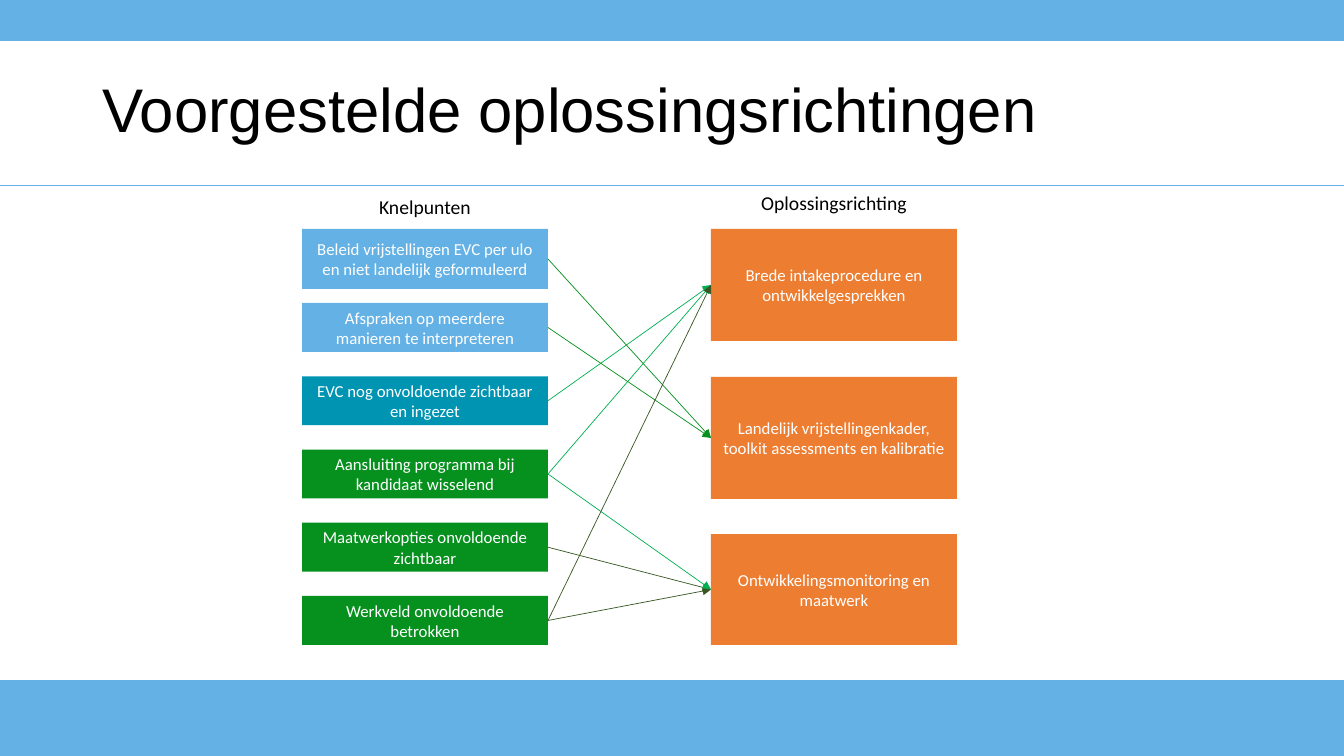
from dataclasses import dataclass

from lxml.etree import SubElement
from pptx import Presentation
from pptx.dml.color import RGBColor
from pptx.enum.shapes import MSO_CONNECTOR, MSO_SHAPE
from pptx.enum.text import MSO_ANCHOR as ANCHOR, PP_ALIGN as ALIGN
from pptx.oxml.ns import qn
from pptx.util import Emu, Pt


@dataclass(frozen=True)
class Theme:
    blue: str = "63B1E5"
    teal: str = "0094B3"
    green: str = "06901D"
    bright: str = "00B050"
    dark: str = "385723"
    orange: str = "ED7D31"
    white: str = "FFFFFF"
    black: str = "000000"
    title_font: str = "Arial"
    body_font: str = "Calibri"
    title_size: int = 44
    heading_size: int = 14
    box_size: int = 12


T = Theme()

TITLE = "Voorgestelde oplossingsrichtingen"
HEADINGS = [("Knelpunten", 302, 190), ("Oplossingsrichting", 711, 186)]
PROBLEMS = [
    ("Beleid vrijstellingen EVC per ulo en niet landelijk geformuleerd", T.blue),
    ("Afspraken op meerdere manieren te interpreteren", T.blue),
    ("EVC nog onvoldoende zichtbaar en ingezet", T.teal),
    ("Aansluiting programma bij kandidaat wisselend", T.green),
    ("Maatwerkopties onvoldoende zichtbaar", T.green),
    ("Werkveld onvoldoende betrokken", T.green),
]
SOLUTIONS = [  # text, top, height
    ("Brede intakeprocedure en ontwikkelgesprekken", 229, 112),
    ("Landelijk vrijstellingenkader, toolkit assessments en kalibratie", 377, 122),
    ("Ontwikkelingsmonitoring en maatwerk", 534, 111),
]
LINKS = [  # problem, solution, colour
    (2, 0, T.bright), (3, 0, T.bright), (0, 1, T.green), (1, 1, T.green),
    (4, 2, T.dark), (5, 2, T.dark), (3, 2, T.bright), (5, 0, T.dark),
]

SLIDE_W, SLIDE_H = 1344, 756
BOX_W, LEFT_X, RIGHT_X = 246, 302, 711
FIRST_TOP, FIRST_H = 229, 60
SECOND_TOP, LAST_TOP, ROW_H = 303, 596, 49
RULE_Y = 185


def px(n):
    return Emu(round(n * 914400 / 100.8))


def rgb(code):
    return RGBColor.from_string(code)


def write(tf, text, size, color, font=T.body_font, align=ALIGN.CENTER):
    tf.word_wrap = True
    p = tf.paragraphs[0]
    p.text = text
    p.alignment = align
    f = p.runs[0].font
    f.name, f.size, f.color.rgb = font, Pt(size), rgb(color)
    return p


def add_box(s, x, y, w, h, fill, text=None):
    sp = s.shapes.add_shape(MSO_SHAPE.RECTANGLE, px(x), px(y), px(w), px(h))
    sp.shadow.inherit = False
    sp.fill.solid()
    sp.fill.fore_color.rgb = rgb(fill)
    if text:
        sp.line.fill.background()
        sp.text_frame.vertical_anchor = ANCHOR.MIDDLE
        write(sp.text_frame, text, T.box_size, T.white)
    else:
        sp.line.color.rgb = rgb(fill)
        sp.line.width = Pt(1)
    return sp


def add_line(s, color, start=(0, 0), end=(0, 0)):
    line = s.shapes.add_connector(
        MSO_CONNECTOR.STRAIGHT, *(px(n) for n in (*start, *end)))
    line.line.color.rgb = rgb(color)
    line.line.width = Pt(0.5)
    SubElement(line._element.spPr, qn("a:effectLst"))
    return line


def add_arrow(s, problem, solution, color):
    """Link the right side of a problem to the left side of a solution."""
    arrow = add_line(s, color)
    arrow.begin_connect(problem, 3)
    arrow.end_connect(solution, 1)
    SubElement(arrow.line._get_or_add_ln(), qn("a:tailEnd"), type="triangle")


def main():
    prs = Presentation()
    prs.slide_width, prs.slide_height = px(SLIDE_W), px(SLIDE_H)
    s = prs.slides.add_slide(prs.slide_layouts[5])

    title = s.shapes.title
    title.left, title.top, title.width, title.height = map(px, (92, 40, 1159, 146))
    title.text_frame.vertical_anchor = ANCHOR.MIDDLE
    p = write(title.text_frame, TITLE, T.title_size, T.black, T.title_font, ALIGN.LEFT)
    p.line_spacing = 0.9

    for top, height in [(0, 40), (681, 75)]:
        add_box(s, 0, top, SLIDE_W, height, T.blue)
    add_line(s, T.blue, (SLIDE_W, RULE_Y), (0, RULE_Y))

    for text, x, y in HEADINGS:
        tb = s.shapes.add_textbox(px(x), px(y), px(BOX_W), px(34))
        write(tb.text_frame, text, T.heading_size, T.black)

    solutions = [add_box(s, RIGHT_X, y, BOX_W, h, T.orange, text)
                 for text, y, h in SOLUTIONS]

    step = (LAST_TOP - SECOND_TOP) / (len(PROBLEMS) - 2)
    rows = [(FIRST_TOP, FIRST_H)]
    rows += [(SECOND_TOP + i * step, ROW_H) for i in range(len(PROBLEMS) - 1)]
    problems = [add_box(s, LEFT_X, y, BOX_W, h, fill, text)
                for (text, fill), (y, h) in zip(PROBLEMS, rows)]

    for i, j, color in LINKS:
        add_arrow(s, problems[i], solutions[j], color)

    prs.save("out.pptx")


if __name__ == "__main__":
    main()
